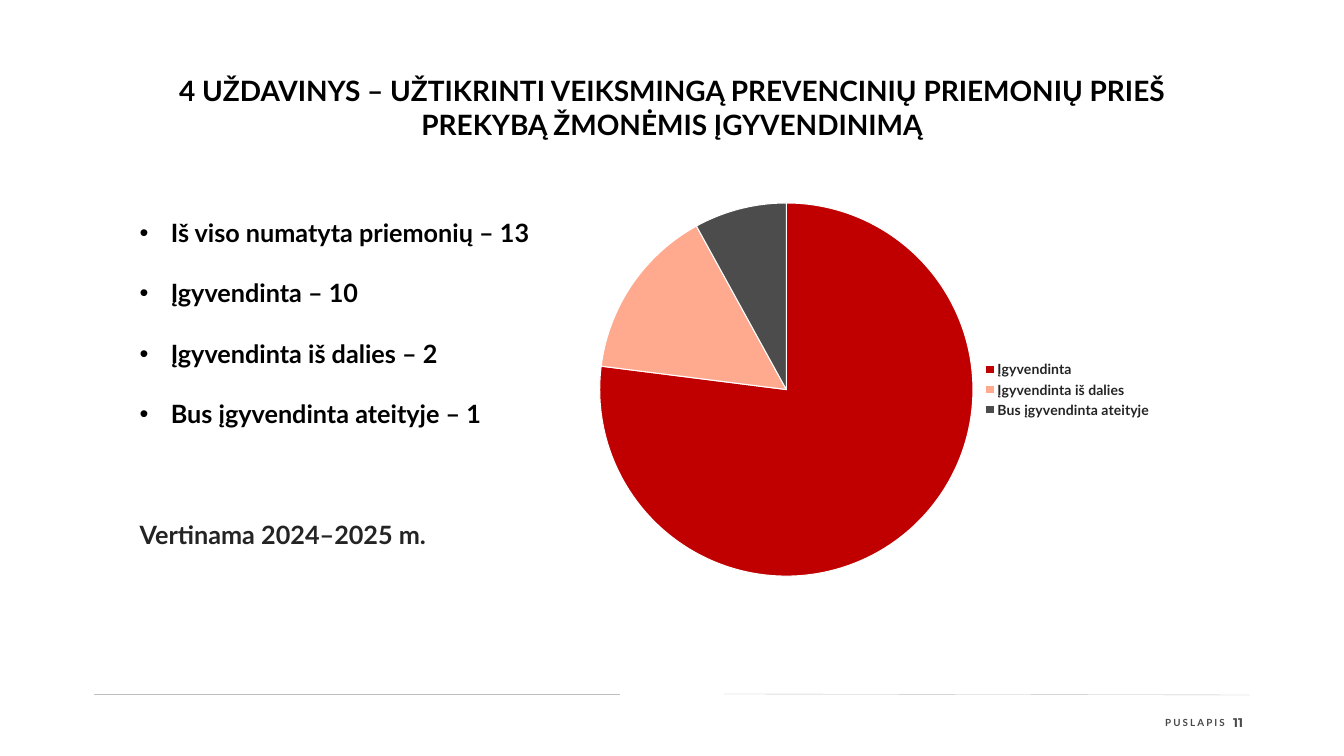
from dataclasses import dataclass

from lxml.etree import SubElement
from pptx import Presentation
from pptx.chart.data import CategoryChartData
from pptx.dml.color import RGBColor
from pptx.enum.chart import XL_CHART_TYPE, XL_LEGEND_POSITION
from pptx.enum.shapes import MSO_CONNECTOR
from pptx.enum.text import MSO_ANCHOR, MSO_AUTO_SIZE, PP_ALIGN
from pptx.oxml.ns import qn
from pptx.util import Emu, Inches, Pt

WIDTH, HEIGHT = Inches(26.66), Inches(15)

BLACK = RGBColor(0x00, 0x00, 0x00)
WHITE = RGBColor(0xFF, 0xFF, 0xFF)
INK = RGBColor(0x24, 0x24, 0x24)
FOOTER_GREY = RGBColor(0x49, 0x49, 0x49)
RULE_GREY = RGBColor(0xBF, 0xBF, 0xBF)
RED = RGBColor(0xC0, 0x00, 0x00)
PEACH = RGBColor(0xFF, 0xA9, 0x8E)
CHARCOAL = RGBColor(0x4C, 0x4C, 0x4C)

LINE_PITCH = 43.2  # points in one 36 pt line


@dataclass(frozen=True)
class Area:
    """A place on the slide, in percent of its width and height."""
    left: float
    top: float
    width: float
    height: float

    def box(self) -> tuple:
        return (across(self.left), down(self.top),
                across(self.width), down(self.height))


@dataclass(frozen=True)
class Style:
    size: float
    color: RGBColor
    font: str = "Lato"


@dataclass(frozen=True)
class Statement:
    text: str
    color: RGBColor = BLACK
    bulleted: bool = True
    lines_before: int = 1


@dataclass(frozen=True)
class Slice:
    status: str
    percent: int
    color: RGBColor


@dataclass(frozen=True)
class Rule:
    start: tuple
    end: tuple


STATEMENTS = (
    Statement("Iš viso numatyta priemonių – 13", lines_before=0),
    Statement("Įgyvendinta – 10"),
    Statement("Įgyvendinta iš dalies – 2"),
    Statement("Bus įgyvendinta ateityje – 1"),
    Statement("Vertinama 2024–2025 m.", INK, bulleted=False, lines_before=3),
)
SLICES = (
    Slice("Įgyvendinta", 77, RED),
    Slice("Įgyvendinta iš dalies", 15, PEACH),
    Slice("Bus įgyvendinta ateityje", 8, CHARCOAL),
)
FOOTER_RULES = (
    Rule((7.01, 91.87), (46.14, 91.87)),
    Rule((53.86, 91.8), (92.99, 91.93)),
)


def across(percent: float) -> Emu:
    return Emu(round(WIDTH * percent / 100))


def down(percent: float) -> Emu:
    return Emu(round(HEIGHT * percent / 100))


def format_font(font, style: Style) -> None:
    font.name = style.font
    font.size = Pt(style.size)
    font.bold = True
    font.color.rgb = style.color


def add_run(paragraph, text: str, style: Style):
    run = paragraph.add_run()
    run.text = text
    format_font(run.font, style)
    return run


def add_bullet(paragraph) -> None:
    properties = paragraph._p.get_or_add_pPr()
    properties.set("marL", str(Inches(0.62)))
    properties.set("indent", str(-Inches(0.62)))
    SubElement(properties, qn("a:buFont")).set("typeface", "Arial")
    SubElement(properties, qn("a:buChar")).set("char", "•")


def add_rule(slide, rule: Rule) -> None:
    line = slide.shapes.add_connector(
        MSO_CONNECTOR.STRAIGHT,
        across(rule.start[0]), down(rule.start[1]),
        across(rule.end[0]), down(rule.end[1]))
    line.line.color.rgb = RULE_GREY
    line.line.width = Pt(0.5)
    SubElement(line._element.spPr, qn("a:effectLst"))


def add_footer_text(slide, area: Area, text: str, style: Style,
                    align: PP_ALIGN, anchor: MSO_ANCHOR, inset: float):
    frame = slide.shapes.add_textbox(*area.box()).text_frame
    frame.word_wrap = False
    frame.vertical_anchor = anchor
    frame.margin_left = frame.margin_right = Inches(inset)
    frame.margin_top = frame.margin_bottom = Inches(inset / 2)
    frame.paragraphs[0].alignment = align
    return add_run(frame.paragraphs[0], text, style)


def add_statements(slide, area: Area, statements: tuple) -> None:
    frame = slide.shapes.add_textbox(*area.box()).text_frame
    frame.word_wrap = True
    for index, statement in enumerate(statements):
        paragraph = frame.add_paragraph() if index else frame.paragraphs[0]
        if statement.lines_before:
            paragraph.space_before = Pt(statement.lines_before * LINE_PITCH)
        if statement.bulleted:
            add_bullet(paragraph)
        add_run(paragraph, statement.text, Style(36, statement.color))


def add_status_pie(slide, area: Area, slices: tuple) -> None:
    data = CategoryChartData()
    data.categories = [part.status for part in slices]
    data.add_series("Series 1", [part.percent for part in slices])
    pie = slide.shapes.add_chart(XL_CHART_TYPE.PIE, *area.box(), data).chart
    pie.has_title = False
    pie.font.name = "Lato"
    pie.font.size = Pt(10)
    pie.has_legend = True
    pie.legend.position = XL_LEGEND_POSITION.RIGHT
    pie.legend.include_in_layout = False
    format_font(pie.legend.font, Style(20, INK))
    pie.plots[0].vary_by_categories = True
    for index, part in enumerate(slices):
        wedge = pie.plots[0].series[0].points[index].format
        wedge.fill.solid()
        wedge.fill.fore_color.rgb = part.color
        wedge.line.color.rgb = WHITE
        wedge.line.width = Pt(1.5)


def set_title(slide, area: Area, text: str) -> None:
    title = slide.shapes.title
    title.left, title.top, title.width, title.height = area.box()
    frame = title.text_frame
    frame.word_wrap = True
    frame.auto_size = MSO_AUTO_SIZE.NONE
    frame.vertical_anchor = MSO_ANCHOR.TOP
    frame.paragraphs[0].alignment = PP_ALIGN.CENTER
    add_run(frame.paragraphs[0], text, Style(40, BLACK))


def main() -> None:
    deck = Presentation()
    deck.slide_width, deck.slide_height = WIDTH, HEIGHT
    slide = deck.slides.add_slide(deck.slide_layouts.get_by_name("Title Only"))

    # Footer: rules, page number and its label
    for rule in FOOTER_RULES:
        add_rule(slide, rule)
    add_footer_text(slide, Area(90.77, 93.87, 2.7, 3.33), "11",
                    Style(18, FOOTER_GREY, "Montserrat"),
                    PP_ALIGN.CENTER, MSO_ANCHOR.TOP, 0.2)
    page_label = add_footer_text(slide, Area(86.53, 94.73, 4.61, 1.6), "PUSLAPIS",
                                 Style(14, FOOTER_GREY),
                                 PP_ALIGN.RIGHT, MSO_ANCHOR.MIDDLE, 0)
    page_label.font._element.set("spc", "300")

    # Content: counts on the left, shares on the right
    add_statements(slide, Area(10.02, 28.4, 78.77, 45.13), STATEMENTS)
    add_status_pie(slide, Area(44, 25.93, 42.16, 51.2), SLICES)

    set_title(slide, Area(8.74, 9.4, 82.52, 9.67),
              "4 UŽDAVINYS – UŽTIKRINTI VEIKSMINGĄ PREVENCINIŲ PRIEMONIŲ PRIEŠ "
              "PREKYBĄ ŽMONĖMIS ĮGYVENDINIMĄ")

    deck.save("out.pptx")


if __name__ == "__main__":
    main()
